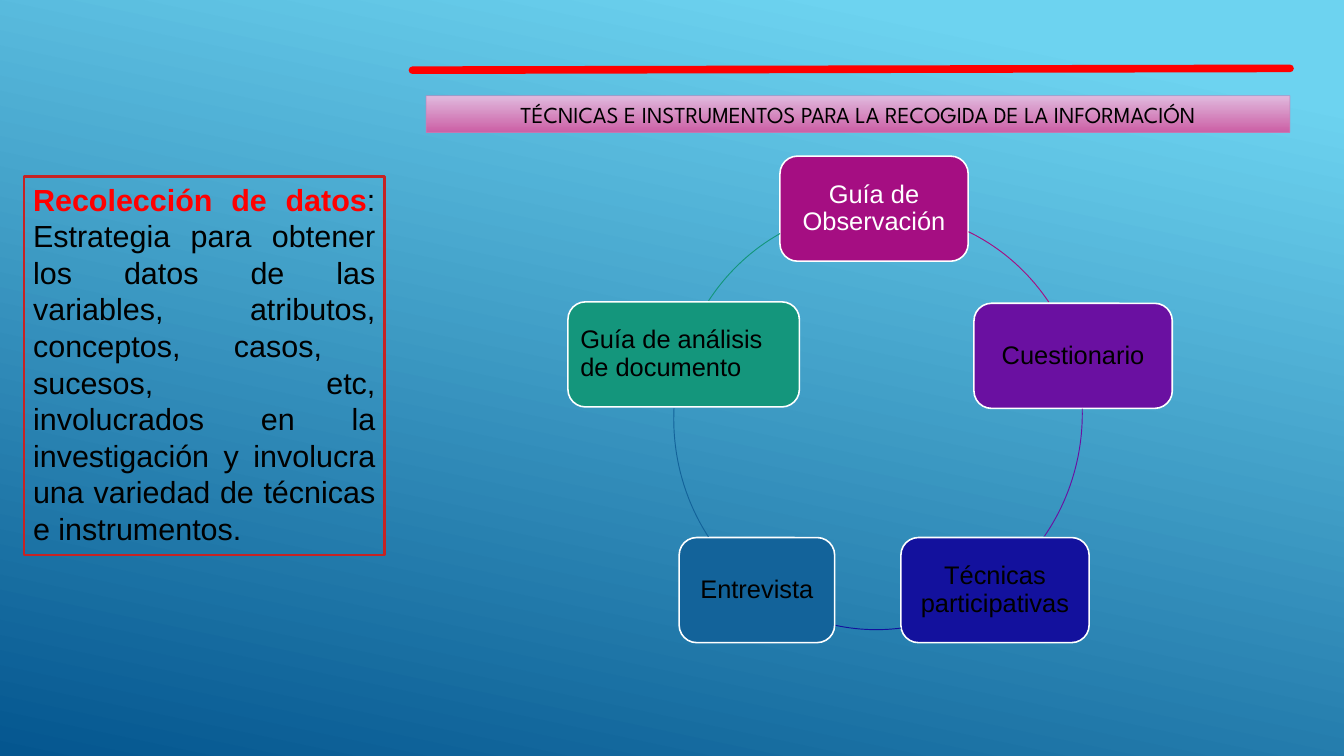
from lxml.etree import SubElement
from pptx import Presentation
from pptx.dml.color import RGBColor
from pptx.enum.shapes import MSO_CONNECTOR as Connector, MSO_SHAPE as Preset
from pptx.enum.text import MSO_ANCHOR as Anchor, PP_ALIGN as Align
from pptx.oxml.ns import qn
from pptx.util import Cm, Pt

BLACK, WHITE, RED = "000000", "FFFFFF", "FF0000"
NODE_HEIGHT = 2.92
NODE_MARGIN = 0.2
LOWER_TOP = 14.94
RING_WIDTH, RING_HEIGHT = 11.25, 11.71
RING_LEFT, RING_TOP = 18.72, 5.79
ANGLE_UNIT = 0.6

NODES = [
    ("Guía de Observación", 21.67, 4.34, 5.23, "A50E82", WHITE, Align.CENTER),
    ("Cuestionario", 27.06, 8.43, 5.51, "6A10A1", BLACK, Align.CENTER),
    ("Técnicas participativas", 25.03, LOWER_TOP, 5.23, "13119D", BLACK, Align.CENTER),
    ("Entrevista", 18.87, LOWER_TOP, 4.32, "13639A", BLACK, Align.CENTER),
    ("Guía de análisis de documento", 15.78, 8.39, 6.43, "14967C", BLACK, Align.LEFT),
]
ARCS = [
    (18.9, 5.89, 294.2, 324.1),
    (18.82, 5.64, 358.6, 36.7),
    (RING_LEFT, RING_TOP, 83.2, 101.2),
    (RING_LEFT, RING_TOP, 144.9, 183.1),
    (RING_LEFT, RING_TOP, 215.2, 242.6),
]
DEFINITION = (
    ": Estrategia para obtener los datos de las variables, atributos, conceptos, "
    "casos,  sucesos, etc, involucrados en la investigación y involucra una "
    "variedad de técnicas e instrumentos."
)


def color(value):
    return RGBColor.from_string(value)


def set_gradient(fill, stops, angle):
    fill.gradient()
    fill.gradient_angle = 360 - angle
    for stop, (position, value) in zip(fill.gradient_stops, stops):
        stop.position = position
        stop.color.rgb = color(value)


def set_line(line, value, width):
    line.color.rgb = color(value)
    line.width = Pt(width)


def add_box(slide, preset, left, top, width, height, line_color, line_width,
            anchor=Anchor.TOP):
    shape = slide.shapes.add_shape(preset, Cm(left), Cm(top), Cm(width), Cm(height))
    shape.shadow.inherit = False
    shape.text_frame.word_wrap = True
    shape.text_frame.vertical_anchor = anchor
    set_line(shape.line, line_color, line_width)
    return shape


def add_run(paragraph, text, size, value, font="Arial", bold=False):
    run = paragraph.add_run()
    run.text = text
    run.font.name = font
    run.font.size = Pt(size)
    run.font.bold = bold
    run.font.color.rgb = color(value)


def add_rule(slide):
    rule = slide.shapes.add_connector(
        Connector.STRAIGHT, Cm(11.46), Cm(1.95), Cm(35.84), Cm(1.9))
    set_line(rule.line, RED, 6)
    rule.line._get_or_add_ln().set("cap", "rnd")
    SubElement(rule._element.spPr, qn("a:effectLst"))


def add_title(slide):
    shape = add_box(slide, Preset.RECTANGLE, 11.84, 2.66, 24, 1.02, "C089BD", 0.75)
    set_gradient(shape.fill, [(0, "E0BADE"), (1, "CC5FA5")], 90)
    line_color = shape.line._get_or_add_ln().find(".//" + qn("a:srgbClr"))
    SubElement(line_color, qn("a:alpha")).set("val", "60000")
    paragraph = shape.text_frame.paragraphs[0]
    paragraph.alignment = Align.CENTER
    add_run(paragraph, "TÉCNICAS E INSTRUMENTOS PARA LA RECOGIDA DE LA INFORMACIÓN",
            18, BLACK, "League Spartan")


def add_node(slide, text, left, top, width, fill_color, text_color, alignment):
    shape = add_box(slide, Preset.ROUNDED_RECTANGLE, left, top, width, NODE_HEIGHT,
                    WHITE, 1.25, Anchor.MIDDLE)
    shape.fill.solid()
    shape.fill.fore_color.rgb = color(fill_color)
    frame = shape.text_frame
    frame.margin_left = frame.margin_right = Cm(NODE_MARGIN)
    frame.margin_top = frame.margin_bottom = Cm(NODE_MARGIN)
    paragraph = frame.paragraphs[0]
    paragraph.alignment = alignment
    paragraph.line_spacing = 0.9
    add_run(paragraph, text, 20, text_color)


def add_arc(slide, left, top, start, end, line_color):
    shape = add_box(slide, Preset.ARC, left, top, RING_WIDTH, RING_HEIGHT,
                    line_color, 0.75)
    shape.fill.background()
    shape.adjustments[0] = start * ANGLE_UNIT
    shape.adjustments[1] = end * ANGLE_UNIT


def add_definition(slide):
    shape = add_box(slide, Preset.RECTANGLE, 0.67, 4.9, 10.01, 10.52, "C62324", 2)
    shape.fill.background()
    paragraph = shape.text_frame.paragraphs[0]
    paragraph.alignment = Align.JUSTIFY
    add_run(paragraph, "Recolección de datos", 24, RED, bold=True)
    add_run(paragraph, DEFINITION, 24, BLACK)


def main():
    presentation = Presentation()
    presentation.slide_width = Cm(37.34)
    presentation.slide_height = Cm(21.01)
    slide = presentation.slides.add_slide(presentation.slide_layouts[6])
    set_gradient(slide.background.fill, [(0.1, "6DD3F0"), (1, "04568F")], 102)
    add_rule(slide)
    add_title(slide)
    for node, arc in zip(NODES, ARCS):
        add_node(slide, *node)
        add_arc(slide, *arc, node[4])
    add_definition(slide)
    presentation.save("out.pptx")


if __name__ == "__main__":
    main()
